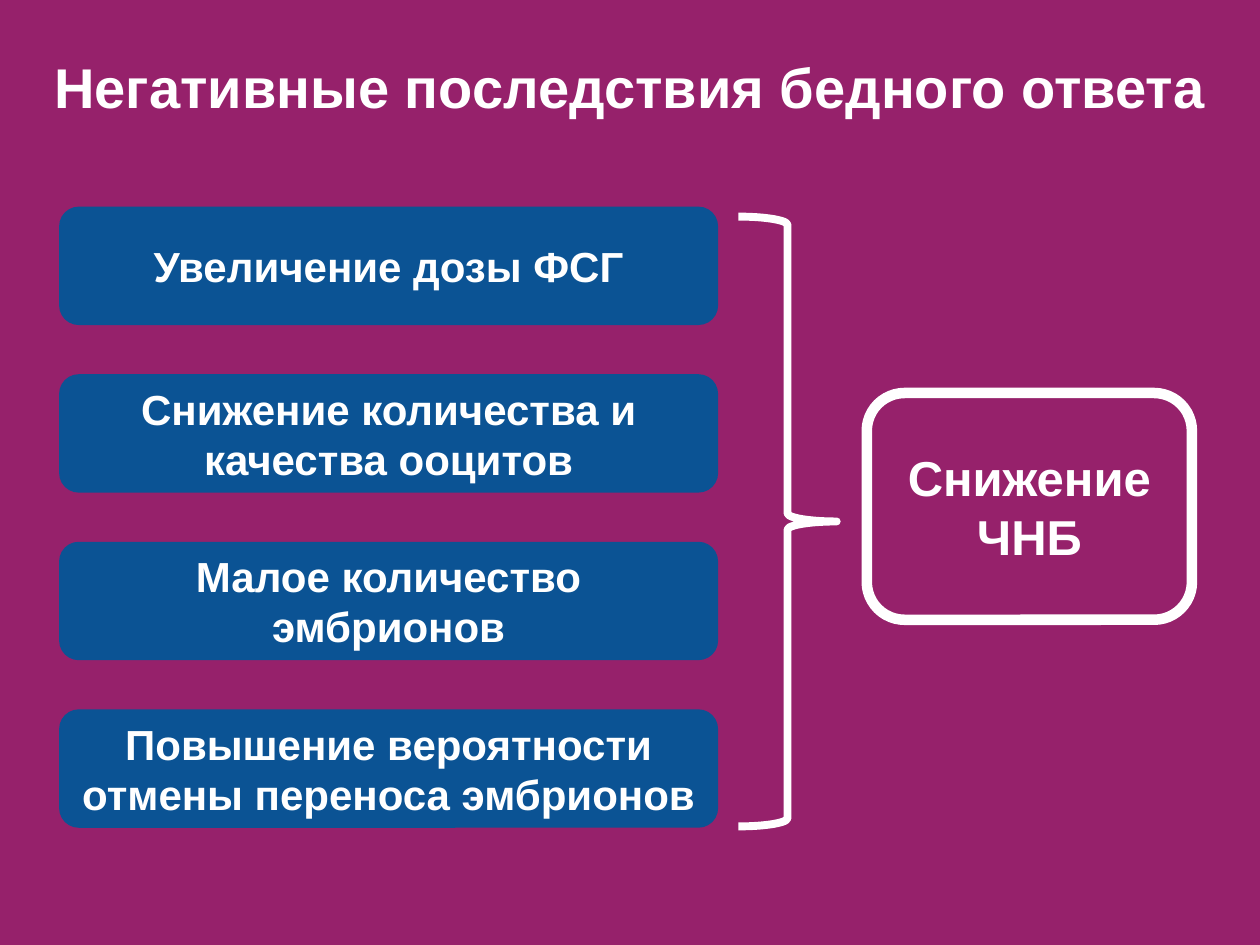
from pptx import Presentation
from pptx.dml.color import RGBColor
from pptx.enum.shapes import MSO_SHAPE
from pptx.enum.text import MSO_ANCHOR, PP_ALIGN
from pptx.util import Pt

COLORS = {"background": "96216B", "box": "0B5394", "white": "FFFFFF"}
CONSEQUENCES = [
    "Увеличение дозы ФСГ",
    "Снижение количества и качества ооцитов",
    "Малое количество эмбрионов",
    "Повышение вероятности отмены переноса эмбрионов",
]
BOX_TOP, BOX_STEP = 118.1, 95.75


def add_outline(slide, kind, left, top, width, height, fill=None, line_width=None):
    """Add a shadowless preset shape with an optional fill and white line."""
    shape = slide.shapes.add_shape(kind, Pt(left), Pt(top), Pt(width), Pt(height))
    shape.shadow.inherit = False
    if fill:
        shape.fill.solid()
        shape.fill.fore_color.rgb = RGBColor.from_string(COLORS[fill])
    else:
        shape.fill.background()
    if line_width:
        shape.line.color.rgb = RGBColor.from_string(COLORS["white"])
        shape.line.width = Pt(line_width)
    else:
        shape.line.fill.background()
    return shape


def write_text(shape, text, size, anchor=MSO_ANCHOR.MIDDLE):
    text_frame = shape.text_frame
    text_frame.text = text
    text_frame.word_wrap = True
    text_frame.vertical_anchor = anchor
    paragraph = text_frame.paragraphs[0]
    paragraph.alignment = PP_ALIGN.CENTER
    font = paragraph.runs[0].font
    font.name = "Arial"
    font.size = Pt(size)
    font.bold = True
    font.color.rgb = RGBColor.from_string(COLORS["white"])


presentation = Presentation()
presentation.slide_width = Pt(720)
presentation.slide_height = Pt(540)
slide = presentation.slides.add_slide(presentation.slide_layouts[6])
slide.background.fill.solid()
slide.background.fill.fore_color.rgb = RGBColor.from_string(COLORS["background"])

title = slide.shapes.add_textbox(Pt(0), Pt(5.8), Pt(720), Pt(62.6))
write_text(title, "Негативные последствия бедного ответа", 32, MSO_ANCHOR.BOTTOM)
title.text_frame.margin_left = title.text_frame.margin_right = Pt(0)
title.text_frame.margin_bottom = Pt(0)

outcome = add_outline(slide, MSO_SHAPE.ROUNDED_RECTANGLE,
                      495.3, 224.6, 185.8, 129.6, line_width=6)
write_text(outcome, "Снижение ЧНБ", 28)

for index, consequence in enumerate(CONSEQUENCES):
    box = add_outline(slide, MSO_SHAPE.ROUNDED_RECTANGLE,
                      33.8, BOX_TOP + index * BOX_STEP, 376.6, 67.7, fill="box")
    write_text(box, consequence, 24)

add_outline(slide, MSO_SHAPE.RIGHT_BRACE, 421.9, 123.8, 56.2, 348.5, line_width=4.5)

presentation.save("out.pptx")
